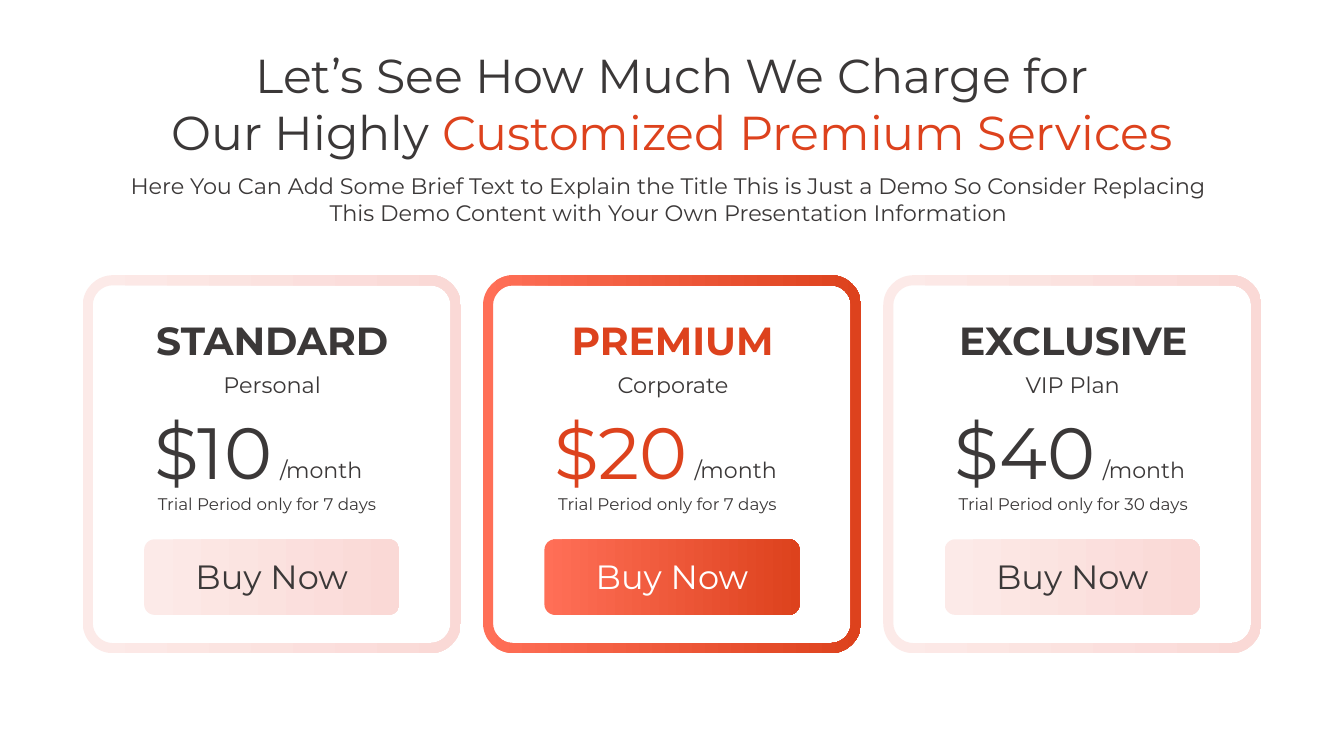
from typing import Any, NamedTuple

import pptx
import pptx.dml.color
import pptx.enum.shapes
import pptx.enum.text
import pptx.oxml.ns
import pptx.util
from lxml import etree

PX = 9144  # one hundredth of an inch, in EMU
HUES = {"ink": "3B3838", "red": "DD421D", "coral": "FF6F57",
        "pink": "FAD9D6", "blush": "FCEAE8", "white": "FFFFFF"}
ALIGN = pptx.enum.text.PP_ALIGN
ROUND = pptx.enum.shapes.MSO_SHAPE.ROUNDED_RECTANGLE


class Box(NamedTuple):
    left: int
    top: int
    width: int
    height: int


class Run(NamedTuple):
    text: str
    hue: str = "ink"


class Plan(NamedTuple):
    name: str
    tag: str
    price: str
    trial: str
    widths: tuple[int, int, int, int]  # one for each text above
    hue: str = "ink"
    label: str = "ink"
    fade: tuple[str, str] = ("blush", "pink")


PLANS = [
    Plan("STANDARD", "Personal", "$10", "Trial Period only for 7 days",
         (258, 118, 146, 244)),
    Plan("PREMIUM", "Corporate", "$20", "Trial Period only for 7 days",
         (224, 135, 160, 244), "red", "white", ("coral", "red")),
    Plan("EXCLUSIVE", "VIP Plan", "$40", "Trial Period only for 30 days",
         (255, 114, 168, 255)),
]

# Card measures
FIRST, TOP, SIDE, PITCH = 82, 273, 375, 397
CURVE, BAR = 30, 10
INSET, MID = 61, 188
ARC = 0.55  # handle length of a quarter circle


def rgb(hue: str) -> pptx.dml.color.RGBColor:
    return pptx.dml.color.RGBColor.from_string(HUES[hue])


def emu(box: Box) -> list[int]:
    return [n * PX for n in box]


def write(shapes: Any, box: Box, lines: list[list[Run]], size: float,
          align: Any = ALIGN.CENTER, bold: bool = False,
          wrap: bool = False) -> None:
    frame = shapes.add_textbox(*emu(box)).text_frame
    frame.word_wrap = wrap
    frame.auto_size = pptx.enum.text.MSO_AUTO_SIZE.SHAPE_TO_FIT_TEXT
    style = {"name": "Montserrat", "size": pptx.util.Pt(size), "bold": bold}
    for i, line in enumerate(lines):
        para = frame.add_paragraph() if i else frame.paragraphs[0]
        para.alignment = align
        for part in line:
            run = para.add_run()
            run.text = part.text
            for key, value in style.items():
                setattr(run.font, key, value)
            run.font.color.rgb = rgb(part.hue)


def paint(shape: Any, fade: tuple[str, str]) -> None:
    shape.shadow.inherit = False
    shape.line.fill.background()
    shape.fill.gradient()
    shape.fill.gradient_angle = 0
    for stop, hue in zip(shape.fill.gradient_stops, fade):
        stop.color.rgb = rgb(hue)


def outline(left: int, half: float, radius: int, flip: int) -> list[tuple[int, int]]:
    """Start point, then a side's end and three curve points per corner."""
    flat, bend = half - radius, half - radius + ARC * radius
    side = [(flat, -half), (bend, -half), (half, -bend), (half, -flat)]
    points = [(-flat, -half)]
    for _ in range(4):
        points += side
        side = [(-y, x) for x, y in side]
    mid = SIDE / 2
    return [(round((left + mid + flip * x) * PX), round((TOP + mid + y) * PX))
            for x, y in points]


def border(shapes: Any, left: int, fade: tuple[str, str]) -> None:
    outer = outline(left, SIDE / 2, CURVE, 1)
    hole = outline(left, SIDE / 2 - BAR, CURVE - BAR, -1)
    pen = shapes.build_freeform(*outer[0])
    pen.add_line_segments(outer[1:])
    pen.move_to(*hole[0])
    pen.add_line_segments(hole[1:])
    shape = pen.convert_to_shape()
    paint(shape, fade)

    # Join the three points of each corner into one curve
    steps = list(shape.element.iter(pptx.oxml.ns.qn("a:lnTo")))
    for i in range(0, len(steps), 4):
        curve = etree.Element(pptx.oxml.ns.qn("a:cubicBezTo"))
        steps[i].addnext(curve)
        for step in steps[i + 1:i + 4]:
            curve.append(step[0])
            step.getparent().remove(step)


def card(shapes: Any, plan: Plan, left: int) -> None:
    edge, mid = left + INSET, left + MID
    name, tag, price, trial = plan.widths

    # Price and frame
    write(shapes, Box(edge + price - 21, 448, 108, 37),
          [[Run("/month")]], 15.8, ALIGN.LEFT)
    write(shapes, Box(edge, 399, price, 97),
          [[Run(plan.price, plan.hue)]], 51.8, ALIGN.LEFT)
    border(shapes, left, plan.fade)

    # Name and terms
    write(shapes, Box(mid - name // 2, 309, name, 57),
          [[Run(plan.name, plan.hue)]], 28, bold=True)
    write(shapes, Box(mid - tag // 2, 363, tag, 37), [[Run(plan.tag)]], 16)
    write(shapes, Box(edge, 485, trial, 30), [[Run(plan.trial)]], 12)

    # Button
    button = shapes.add_shape(ROUND, *emu(Box(edge, 535, 253, 75)))
    button.adjustments[0] = 0.14
    paint(button, plan.fade)
    write(shapes, Box(edge, 547, 253, 50),
          [[Run("Buy Now", plan.label)]], 24, wrap=True)


def main() -> None:
    deck = pptx.Presentation()
    deck.slide_width, deck.slide_height = 1333 * PX, 750 * PX
    slide = deck.slides.add_slide(deck.slide_layouts[6])

    # Pricing cards
    for i in (1, 0, 2):
        card(slide.shapes.add_group_shape().shapes, PLANS[i], FIRST + i * PITCH)

    # Heading
    write(slide.shapes, Box(125, 41, 1083, 125), [
        [Run("Let’s See How Much We Charge for")],
        [Run("Our Highly "), Run("Customized Premium Services", "red")],
    ], 34)
    write(slide.shapes, Box(106, 166, 1114, 64), [
        [Run("Here You Can Add Some Brief Text to Explain the Title "
             "This is Just a Demo So Consider Replacing")],
        [Run("This Demo Content with Your Own Presentation Information")],
    ], 16, wrap=True)

    deck.save("out.pptx")


if __name__ == "__main__":
    main()
